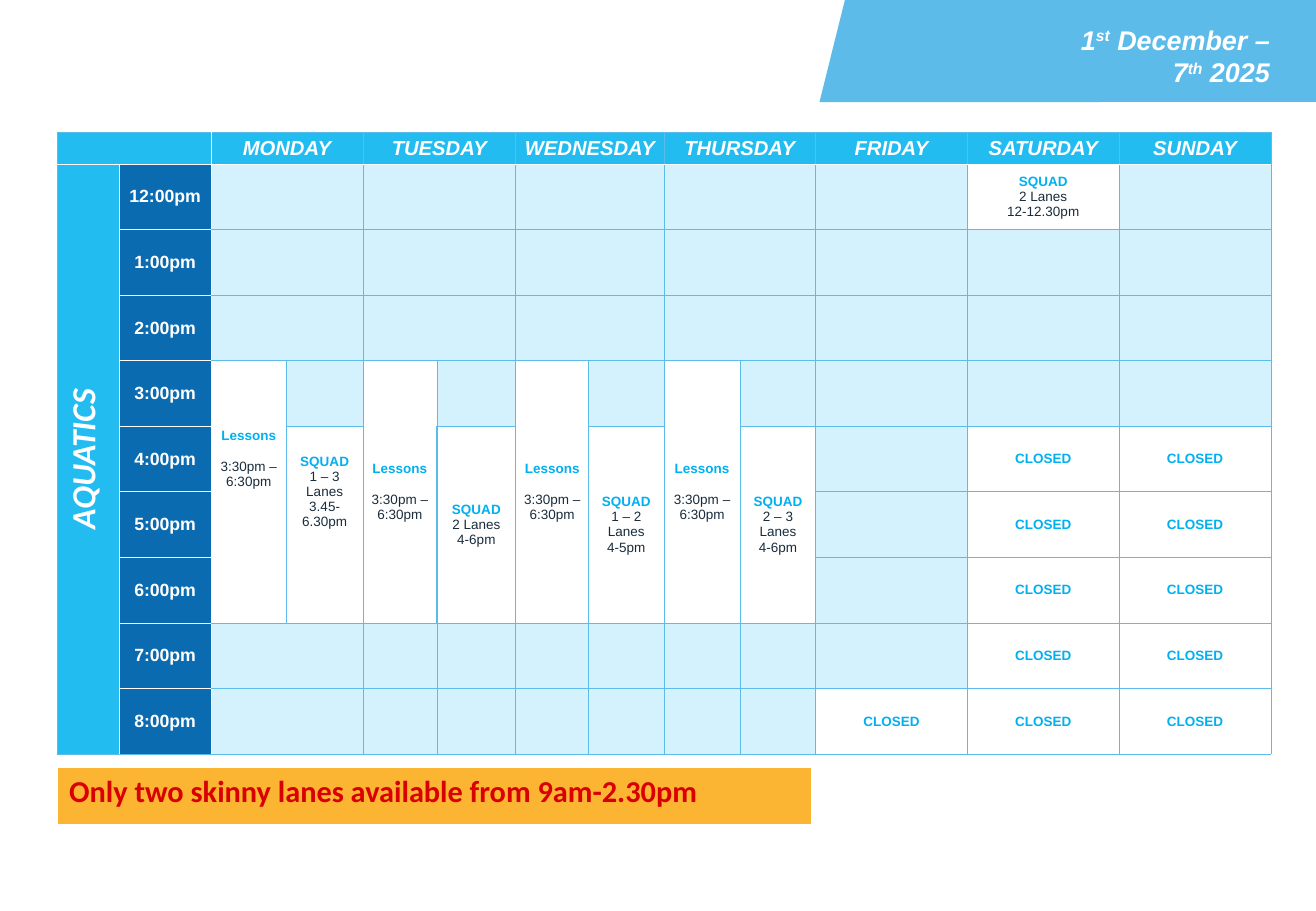
from lxml.etree import SubElement
from pptx import Presentation
from pptx.dml.color import RGBColor
from pptx.enum.shapes import MSO_SHAPE
from pptx.enum.text import MSO_ANCHOR, PP_ALIGN
from pptx.oxml.ns import qn
from pptx.util import Inches, Pt

WHITE, SKY, CYAN, NAVY = "FFFFFF", "5DBBEA", "22BCF0", "0B6BB0"
PALE, ACCENT, INK = "D4F2FD", "00B0F0", "1A2C3B"


def style_cell(cell, fill, borders, insets):
    """Borders are (colour, points) for left, right, top, bottom; None is no line."""
    cell.margin_left = cell.margin_right = Inches(insets[0])
    cell.margin_top = cell.margin_bottom = Inches(insets[1])
    cell.vertical_anchor = MSO_ANCHOR.MIDDLE
    properties = cell._tc.get_or_add_tcPr()
    for side, border in zip("LRTB", borders):
        line = SubElement(properties, qn(f"a:ln{side}"))
        if border is None:
            SubElement(line, qn("a:noFill"))
            continue
        line.set("w", str(Pt(border[1])))
        solid = SubElement(line, qn("a:solidFill"))
        SubElement(solid, qn("a:srgbClr")).set("val", border[0])
    cell.fill.solid()
    cell.fill.fore_color.rgb = RGBColor.from_string(fill)


def add_run(paragraph, text, size, color, bold=True, italic=False, font="Arial"):
    run = paragraph.add_run()
    run.text = text
    run.font.name, run.font.size = font, Pt(size)
    run.font.bold, run.font.italic = bold, italic
    run.font.color.rgb = RGBColor.from_string(color)
    return run


presentation = Presentation()
presentation.slide_width, presentation.slide_height = Inches(10.84), Inches(7.5)
slide = presentation.slides.add_slide(presentation.slide_layouts[6])

# Date banner
for preset, left, width in ((MSO_SHAPE.PARALLELOGRAM, 6.75, 2.52),
                            (MSO_SHAPE.RECTANGLE, 7.28, 3.56)):
    shape = slide.shapes.add_shape(preset, Inches(left), 0, Inches(width), Inches(0.84))
    shape.shadow.inherit = False
    shape.fill.solid()
    shape.fill.fore_color.rgb = RGBColor.from_string(SKY)
    shape.line.fill.background()

date_box = slide.shapes.add_textbox(Inches(6.59), Inches(0.19), Inches(3.87), Inches(0.54))
frame = date_box.text_frame
frame.word_wrap = True
frame.margin_left = frame.margin_right = frame.margin_top = frame.margin_bottom = 0
for index, parts in enumerate((("1", "st", " December –"), ("7", "th", " 2025"))):
    paragraph = frame.add_paragraph() if index else frame.paragraphs[0]
    paragraph.alignment = PP_ALIGN.RIGHT
    for part in parts:
        run = add_run(paragraph, part, 16, WHITE, italic=True)
        if part in ("st", "th"):
            run.font._element.set("baseline", "30000")

# Timetable
column_widths = [0.51, 0.76, 0.62, 0.63, 0.61, 0.65, 0.6, 0.62, 0.63, 0.62, 1.25, 1.25, 1.25]
row_heights = [0.26] + [0.54] * 9
day_columns = {"MONDAY": 2, "TUESDAY": 4, "WEDNESDAY": 6, "THURSDAY": 8,
               "FRIDAY": 10, "SATURDAY": 11, "SUNDAY": 12}
times = ["12:00pm"] + [f"{hour}:00pm" for hour in range(1, 9)]
lesson_times = "3:30pm – 6:30pm"

# (row, column): rows spanned, lines
sessions = {
    (1, 11): (1, ["SQUAD", "2 Lanes", "12-12.30pm"]),
    (5, 3): (2, ["SQUAD", "1 – 3 Lanes", "3.45-6.30pm"]),
    (5, 5): (3, ["SQUAD", "2 Lanes", "4-6pm"]),
    (5, 7): (3, ["SQUAD", "1 – 2 Lanes", "4-5pm"]),
    (5, 9): (3, ["SQUAD", "2 – 3 Lanes", "4-6pm"]),
    (9, 10): (1, ["CLOSED"]),
}
for column in (2, 4, 6, 8):
    sessions[4, column] = (3 if column == 2 else 4, ["Lessons", lesson_times])
for row in range(5, 10):
    for column in (11, 12):
        sessions[row, column] = (1, ["CLOSED"])
booked = {(row + step, column) for (row, column), (span, _) in sessions.items()
          for step in range(span)} | {(7, 2), (7, 3)}

table = slide.shapes.add_table(10, 13, Inches(0.47), Inches(1.09),
                               Inches(10), Inches(sum(row_heights))).table
table.first_row = table.horz_banding = False
for column, width in enumerate(column_widths):
    table.columns[column].width = Inches(width)
for row, height in enumerate(row_heights):
    table.rows[row].height = Inches(height)

for row in range(10):
    for column in range(13):
        vertical = [(WHITE if edge in (1, 2) else SKY,
                     1 if edge in (3, 5, 7, 9) and 5 <= row <= 7 else 0.5)
                    for edge in (column, column + 1)]
        horizontal = [None if edge == 7 and column in (2, 3) else
                      (WHITE if edge == 1 or column == 1 and 1 < edge < 10 else SKY, 0.5)
                      for edge in (row, row + 1)]
        if row == 0:
            fill, insets = CYAN, (0.01, 0.02)
        elif column == 0:
            fill, insets = CYAN, (0.04, 0.05)
        elif column == 1:
            fill, insets = NAVY, (0.05, 0)
        else:
            fill = WHITE if (row, column) in booked else PALE
            squad = column in (3, 5, 7, 9) and 5 <= row <= 7
            insets = (0.1, 0.05) if squad else (0.05, 0)
        style_cell(table.cell(row, column), fill, vertical + horizontal, insets)

table.cell(0, 0).merge(table.cell(0, 1))
table.cell(1, 0).merge(table.cell(9, 0))
for row in (0, 1, 2, 3, 8, 9):
    for column in (2, 4, 6, 8) if row < 4 else (2,):
        table.cell(row, column).merge(table.cell(row, column + 1))

for day, column in day_columns.items():
    add_run(table.cell(0, column).text_frame.paragraphs[0], day, 12, WHITE, italic=True)
for row, time in enumerate(times, 1):
    add_run(table.cell(row, 1).text_frame.paragraphs[0], time, 10.5, WHITE)

section = table.cell(1, 0)
section._tc.tcPr.set("vert", "vert270")
add_run(section.text_frame.paragraphs[0], "AQUATICS", 20, WHITE, italic=True, font="Calibri")

for (row, column), (span, lines) in sessions.items():
    cell = table.cell(row, column)
    if span > 1:
        cell.merge(table.cell(row + span - 1, column))
    for index, line in enumerate(lines):
        paragraph = cell.text_frame.add_paragraph() if index else cell.text_frame.paragraphs[0]
        add_run(paragraph, line, 8, INK if index else ACCENT, bold=index == 0)
        if line == lesson_times:
            paragraph.space_before = Pt(9.2)

for cell in table.iter_cells():
    for paragraph in cell.text_frame.paragraphs:
        paragraph.alignment = PP_ALIGN.CENTER
        if not paragraph.runs:
            SubElement(paragraph._p, qn("a:endParaRPr")).set("sz", "800")

# Lane notice
notice = slide.shapes.add_table(1, 1, Inches(0.47), Inches(6.32),
                                Inches(6.22), Inches(0.48)).table
notice.first_row = notice.horz_banding = False
notice_cell = notice.cell(0, 0)
style_cell(notice_cell, "FCB533", [(WHITE, 1)] * 3 + [(WHITE, 3)], (0.1, 0.05))
notice_cell.vertical_anchor = MSO_ANCHOR.TOP
add_run(notice_cell.text_frame.paragraphs[0],
        "Only two skinny lanes available from 9am-2.30pm", 18, "D80000", font="Calibri")

presentation.save("out.pptx")
